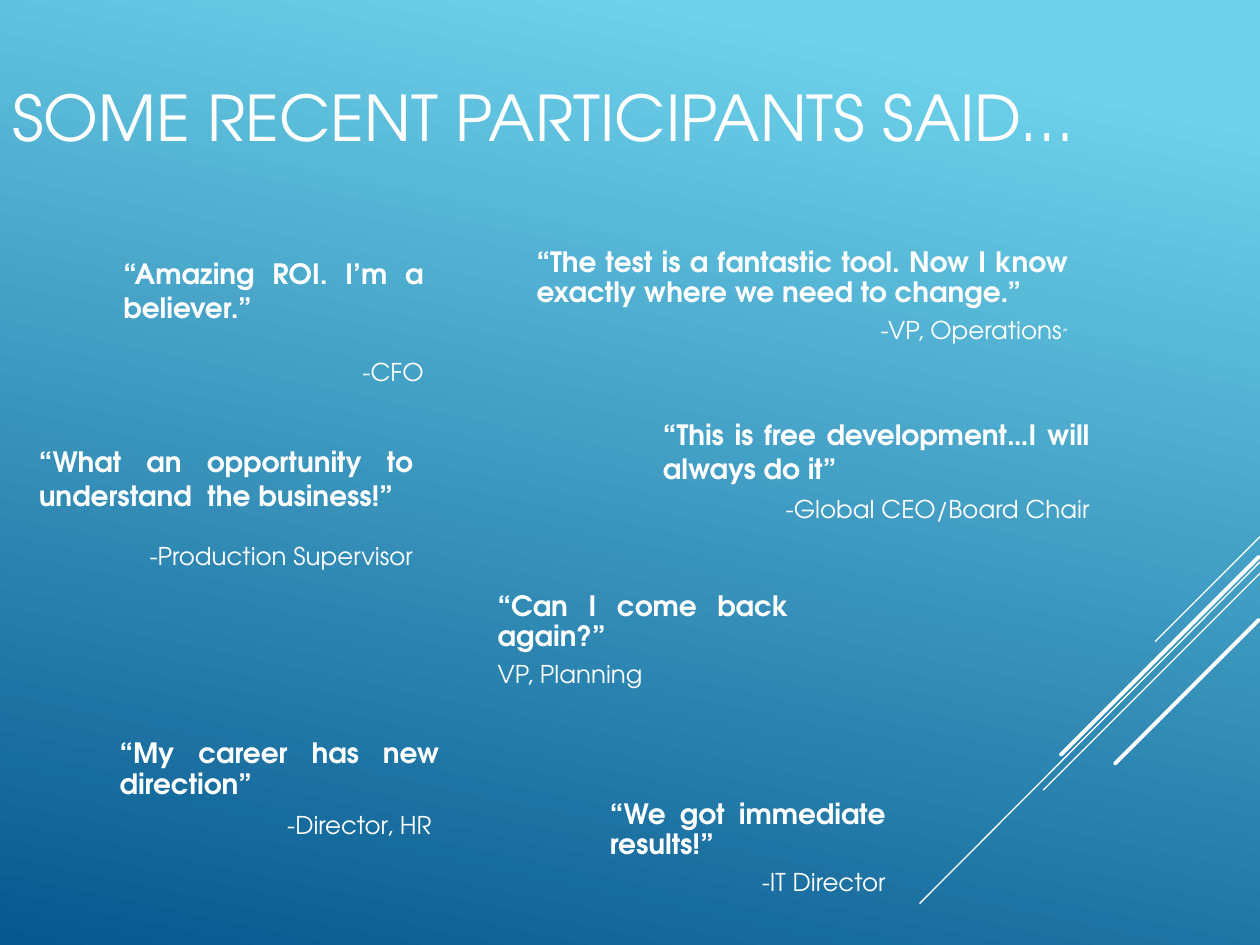
from lxml.etree import SubElement
from pptx import Presentation
from pptx.dml.color import RGBColor as Rgb
from pptx.enum.shapes import MSO_CONNECTOR as Conn
from pptx.enum.text import MSO_ANCHOR as Anchor, PP_ALIGN as Align
from pptx.oxml.ns import qn
from pptx.util import Pt

FONT = "TeX Gyre Adventor"
HUES = {"sky": "6ED2EB", "deep": "06588E", "white": "FFFFFF"}

deck = Presentation()
deck.slide_width, deck.slide_height = Pt(720), Pt(540)
slide = deck.slides.add_slide(deck.slide_layouts[6])

fill = slide.background.fill
fill.gradient()
fill.gradient_angle = 258
for stop, hue, pos in zip(fill.gradient_stops, ("sky", "deep"), (0.1, 1)):
    stop.color.rgb = Rgb.from_string(HUES[hue])
    stop.position = pos


def write(para, text, size=16, bold=False, align=Align.LEFT, line=1, before=0, after=0):
    para.alignment, para.line_spacing = align, line
    para.space_before, para.space_after = Pt(before), Pt(after)
    run = para.add_run()
    run.text = text
    font = run.font
    font.name, font.size, font.bold = FONT, Pt(size), bold
    font.color.rgb = Rgb.from_string(HUES["white"])


def frame(left, top, width, height, anchor, pad):
    box = slide.shapes.add_textbox(Pt(left), Pt(top), Pt(width), Pt(height)).text_frame
    box.word_wrap, box.vertical_anchor = True, anchor
    box.margin_left, box.margin_top, box.margin_right, box.margin_bottom = map(Pt, pad)
    return box


rays = [
    (720, 306.7, 660.2, 366.5, 0.75),
    (720, 321.1, 525.6, 516.2, 0.75),
    (720, 327.6, 596.2, 451.4, 0.75),
    (719.3, 318.2, 606.2, 431.3, 2.25),
    (719.3, 354.2, 637.2, 436.3, 2.25),
]
for *ends, width in rays:
    ray = slide.shapes.add_connector(Conn.STRAIGHT, *map(Pt, ends))
    ray.line.color.rgb = Rgb.from_string(HUES["white"])
    ray.line.width = Pt(width)
    ray.line._get_or_add_ln().set("cap", "rnd")
    SubElement(ray._element.spPr, qn("a:effectLst"))

WIDE, SLIM = (7.2, 3.6, 7.2, 3.6), (2.2, 0.7, 2.2, 0)
title = frame(0, 21.6, 720, 90, Anchor.MIDDLE, WIDE)
write(title.paragraphs[0], "SOME RECENT PARTICIPANTS SAID…", size=36)

TOP, LOW, RIGHT, LEFT = Anchor.TOP, Anchor.BOTTOM, Align.RIGHT, Align.LEFT
quotes = [
    ((376.6, 228.2, 248.4, 71.2), LOW, SLIM, 1, 5.6, 0, RIGHT,
     "“This is free development…I will always do it”", "-Global CEO/Board Chair", None),
    ((346.3, 445, 162, 67.5), LOW, SLIM, 0.9, 5.6, 0, RIGHT,
     "“We got immediate results!”", "-IT Director", None),
    ((282.2, 331.9, 170.6, 61.7), LOW, SLIM, 0.9, 5.6, 0, LEFT,
     "“Can I come back again?”", "VP, Planning", None),
    ((66.2, 410.4, 187.2, 69.8), LOW, SLIM, 0.9, 5.6, 0, RIGHT,
     "“My career has new direction”", "-Director, HR", (" ", 16)),
    ((15.1, 250.6, 228.2, 79.9), TOP, WIDE, 1, 0, 16.5, RIGHT,
     "“What an opportunity to understand  the business!”", "-Production Supervisor", None),
    ((63.4, 143.3, 185.8, 85), TOP, WIDE, 1, 0, 18.9, RIGHT,
     "“Amazing ROI. I’m a believer.”", "-CFO", None),
    ((299.5, 138.2, 318.2, 66.2), TOP, WIDE, 0.9, 5.6, 0, RIGHT,
     "“The test is a fantastic tool. Now I know exactly where we need to change.”",
     "-VP, Operations", ("”", 8)),
]
for place, anchor, pad, line, after, gap, side, quote, name, tail in quotes:
    box = frame(*place, anchor, pad)
    write(box.paragraphs[0], quote, bold=True, align=Align.JUSTIFY, line=line, after=after)
    para = box.add_paragraph()
    write(para, name, size=14, align=side, line=line, before=gap)
    if tail:
        write(para, tail[0], size=tail[1], align=side, line=line, before=gap)

deck.save("out.pptx")
